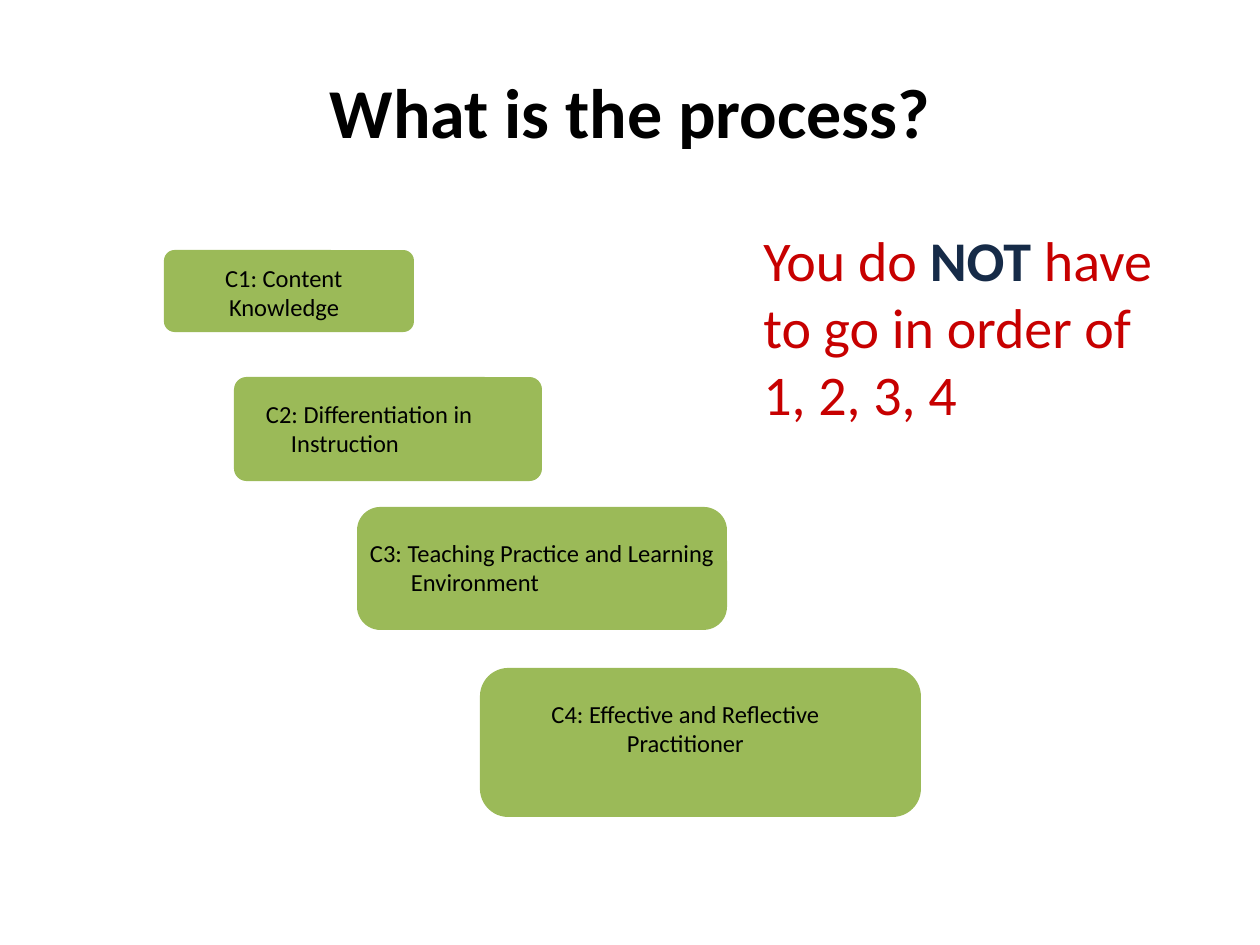
from dataclasses import dataclass

from pptx import Presentation
from pptx import util as u
from pptx.dml.color import RGBColor
from pptx.enum import shapes, text


@dataclass(frozen=True)
class Theme:
    """Colours, font and type sizes of the slide."""
    font: str = "Calibri"
    ink: str = "000000"
    step: str = "9BBA58"
    note: str = "C70000"
    stress: str = "162B48"
    title: int = 40
    body: int = 32
    label: int = 14


THEME = Theme()
SCALE = 914400 / 126
STEPS = [
    ("C1: Content Knowledge", (164, 250, 250, 82), 11, (224, 263, 145, 59), (5, -4), False),
    ("C2: Differentiation in Instruction", (234, 377, 308, 104), 13, (263, 399, 304, 59), (28, -25), False),
    ("C3: Teaching Practice and Learning Environment", (357, 507, 370, 123), 23, (368, 538, 348, 59), (43, -41), False),
    ("C4: Effective and Reflective Practitioner", (480, 668, 441, 149), 28, (515, 699, 340, 59), (1, 0), True),
]


def px(n):
    """Turn pixels into EMU."""
    return u.Emu(round(n * SCALE))


def style(font, size, color, bold=False):
    """Set the face, size, colour and weight of a font."""
    font.name = THEME.font
    font.size = u.Pt(size)
    font.bold = bold
    font.color.rgb = RGBColor.from_string(color)


def add_text(slide, box, words="", center=False, inset=True):
    """Add a wrapping text box and return its paragraph."""
    frame = slide.shapes.add_textbox(*map(px, box)).text_frame
    frame.word_wrap = True
    if not inset:
        frame.margin_left = frame.margin_right = 0
        frame.margin_top = frame.margin_bottom = 0
    para = frame.paragraphs[0]
    para.text = words
    para.alignment = text.PP_ALIGN.CENTER if center else text.PP_ALIGN.LEFT
    return para


def add_step(slide, words, box, radius, area, indent, center):
    """Add a rounded block with its hanging label."""
    block = slide.shapes.add_shape(shapes.MSO_SHAPE.ROUNDED_RECTANGLE, *map(px, box))
    block.adjustments[0] = round(radius / box[3], 2)
    block.shadow.inherit = False
    block.fill.solid()
    block.fill.fore_color.rgb = RGBColor.from_string(THEME.step)
    block.line.fill.background()
    para = add_text(slide, area, words, center, inset=False)
    style(para.font, THEME.label, THEME.ink)
    props = para._p.get_or_add_pPr()
    for name, size in zip(("marL", "indent"), indent):
        props.set(name, str(px(size)))


def add_note(slide, box, parts):
    """Add a note made of plain and stressed parts."""
    para = add_text(slide, box)
    for words, stress in parts:
        for i, line in enumerate(words.split("\n")):
            if i:
                para.add_line_break()
            run = para.add_run()
            run.text = line
            style(run.font, THEME.body, THEME.stress if stress else THEME.note, stress)


def main():
    """Build and save the slide."""
    deck = Presentation()
    deck.slide_width, deck.slide_height = px(1260), px(945)
    slide = deck.slides.add_slide(deck.slide_layouts[6])
    title = add_text(slide, (42, 62, 1176, 125), "What is the process?", center=True)
    style(title.font, THEME.title, THEME.ink, True)
    for step in STEPS:
        add_step(slide, *step)
    add_note(slide, (751, 219, 466, 217), [
        ("You do ", False), ("NOT", True), (" have to go in order of\n1, 2, 3, 4", False)])
    deck.save("out.pptx")


if __name__ == "__main__":
    main()
